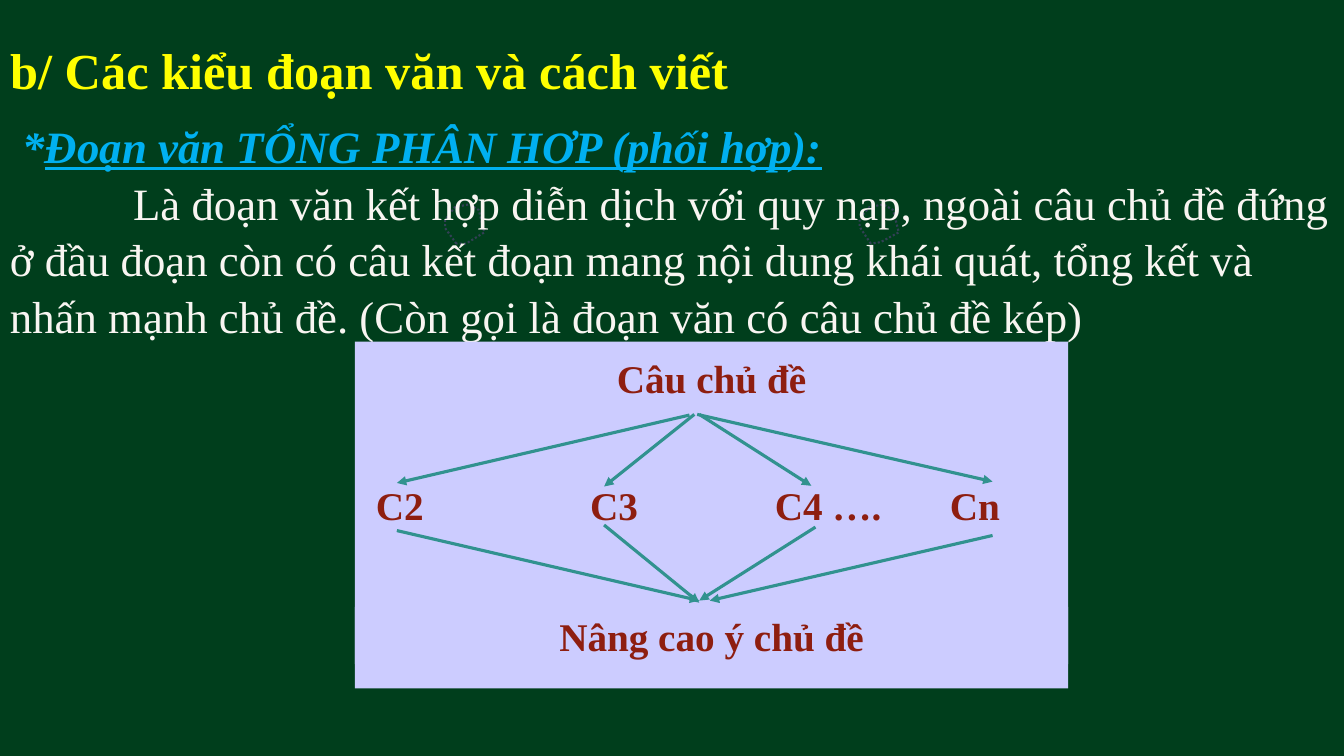
from dataclasses import dataclass

import lxml.etree
import pptx
import pptx.dml.color
import pptx.enum.dml
import pptx.enum.shapes
import pptx.enum.text
import pptx.oxml.ns
import pptx.shapes.autoshape
import pptx.shapes.base
import pptx.slide
import pptx.text.text
import pptx.util

Pt = pptx.util.Pt
RGB = pptx.dml.color.RGBColor
Align = pptx.enum.text.PP_ALIGN
Anchor = pptx.enum.text.MSO_ANCHOR
qn = pptx.oxml.ns.qn

GREEN = RGB(0x00, 0x3E, 0x1C)
YELLOW = RGB(0xFF, 0xFF, 0x00)
BLUE = RGB(0x00, 0xB0, 0xF0)
CREAM = RGB(0xF8, 0xF5, 0xF1)
LILAC = RGB(0xCC, 0xCC, 0xFF)
RED = RGB(0x8E, 0x1E, 0x10)
TEAL = RGB(0x31, 0x92, 0x8F)
SLATE = RGB(0x32, 0x40, 0x55)
FACE = "Times New Roman"


@dataclass
class Panel:
    text: str
    top: float
    height: float
    inset: float
    anchor: Anchor


@dataclass
class Label:
    text: str
    left: float
    width: float


@dataclass
class Arrow:
    x1: float
    y1: float
    x2: float
    y2: float


PANELS = [
    Panel("Câu chủ đề", 244, 247.7, 9.4, Anchor.TOP),
    Panel("Nâng cao ý chủ đề", 433.5, 41, 3.6, Anchor.MIDDLE),
]
LABELS = [
    Label("C2", 268.5, 60),
    Label("C3", 421.5, 60),
    Label("C4 ….", 553.5, 100),
    Label("Cn", 678.5, 60),
]
ARROWS = [
    Arrow(492.5, 296.5, 283.5, 345),
    Arrow(496, 296, 431.5, 347.5),
    Arrow(499.5, 296, 579.5, 347),
    Arrow(498, 296, 709, 344),
    Arrow(283.5, 379, 499.5, 429),
    Arrow(431.5, 375, 499.5, 430.5),
    Arrow(582.5, 376.5, 499.5, 429),
    Arrow(709, 382.5, 507, 429),
]
RING = [(326, 174), (318, 163), (318, 157), (325, 148), (335, 146),
        (342, 150), (346, 166), (333, 173.5)]


def style(par: pptx.text.text._Paragraph, size: float, color: RGB, bold: bool = True) -> None:
    font = par.font
    font.name = FACE
    font.size = Pt(size)
    font.bold = bold
    font.color.rgb = color


def place(item: pptx.shapes.base.BaseShape, left: float, top: float, width: float, height: float) -> None:
    item.left, item.top = Pt(left), Pt(top)
    item.width, item.height = Pt(width), Pt(height)


def pad(frame: pptx.text.text.TextFrame, size: float) -> None:
    frame.margin_left = frame.margin_right = Pt(size)
    frame.margin_top = frame.margin_bottom = Pt(size)


def indent(par: pptx.text.text._Paragraph, size: float) -> None:
    props = par._p.get_or_add_pPr()
    props.set("marL", "0")
    props.set("indent", str(Pt(size)))


def add_ring(slide: pptx.slide.Slide, dx: float, dy: float) -> None:
    spots = [(x + dx, y + dy) for x, y in RING]
    pen = slide.shapes.build_freeform(*spots[0], scale=Pt(1))
    pen.add_line_segments(spots[1:], close=True)
    ring = pen.convert_to_shape()
    ring.shadow.inherit = False
    ring.fill.background()
    ring.line.color.rgb = SLATE
    ring.line.width = Pt(1.5)
    ring.line.dash_style = pptx.enum.dml.MSO_LINE.ROUND_DOT


def add_title(slide: pptx.slide.Slide) -> None:
    title = slide.shapes.title
    place(title, 0, 18.5, 891.5, 61.5)
    frame = title.text_frame
    frame.text = "b/ Các kiểu đoạn văn và cách viết"
    frame.auto_size = pptx.enum.text.MSO_AUTO_SIZE.NONE
    frame.vertical_anchor = Anchor.MIDDLE
    pad(frame, 7.2)
    par = frame.paragraphs[0]
    par.alignment = Align.LEFT
    style(par, 36, YELLOW)


def add_body(slide: pptx.slide.Slide) -> None:
    box = slide.shapes.add_textbox(0, Pt(79.5), Pt(960), Pt(162.5))
    frame = box.text_frame
    frame.word_wrap = True
    head = frame.paragraphs[0]
    head.add_run().text = "*"
    name = head.add_run()
    name.text = "Đoạn văn TỔNG PHÂN HƠP (phối hợp):"
    name.font.underline = True
    style(head, 32, BLUE)
    head.font.italic = True
    indent(head, 9)
    text = frame.add_paragraph()
    text.text = ("Là đoạn văn kết hợp diễn dịch với quy nạp, ngoài câu chủ đề đứng "
                 "ở đầu đoạn còn có câu kết đoạn mang nội dung khái quát, tổng kết và "
                 "nhấn mạnh chủ đề. (Còn gọi là đoạn văn có câu chủ đề kép)")
    style(text, 32, CREAM, False)
    indent(text, 88)
    for par in frame.paragraphs:
        par.line_spacing = 1.05


def add_panel(slide: pptx.slide.Slide, panel: Panel) -> None:
    kind = pptx.enum.shapes.MSO_SHAPE.RECTANGLE
    rect = slide.shapes.add_shape(kind, Pt(253.5), Pt(panel.top), Pt(509.5), Pt(panel.height))
    rect.shadow.inherit = False
    rect.fill.solid()
    rect.fill.fore_color.rgb = LILAC
    rect.line.fill.background()
    frame = rect.text_frame
    frame.text = panel.text
    frame.word_wrap = True
    frame.vertical_anchor = panel.anchor
    pad(frame, panel.inset)
    frame.paragraphs[0].alignment = Align.CENTER
    style(frame.paragraphs[0], 28, RED)


def add_label(slide: pptx.slide.Slide, label: Label) -> None:
    box = slide.shapes.add_textbox(Pt(label.left), Pt(340.5), Pt(label.width), Pt(41))
    frame = box.text_frame
    frame.text = label.text
    frame.word_wrap = True
    frame.margin_left = frame.margin_right = 0
    style(frame.paragraphs[0], 28, RED)


def add_arrow(slide: pptx.slide.Slide, arrow: Arrow) -> None:
    kind = pptx.enum.shapes.MSO_CONNECTOR.STRAIGHT
    line = slide.shapes.add_connector(kind, Pt(arrow.x1), Pt(arrow.y1), Pt(arrow.x2), Pt(arrow.y2))
    line.line.color.rgb = TEAL
    line.line.width = Pt(2.25)
    lxml.etree.SubElement(line.line._get_or_add_ln(), qn("a:tailEnd"), type="triangle")
    lxml.etree.SubElement(line._element.spPr, qn("a:effectLst"))


def main() -> None:
    deck = pptx.Presentation()
    deck.slide_width, deck.slide_height = Pt(960), Pt(540)
    slide = deck.slides.add_slide(deck.slide_layouts[5])
    slide.background.fill.solid()
    slide.background.fill.fore_color.rgb = GREEN
    add_ring(slide, 0, 0)
    add_ring(slide, 296, -0.5)
    add_title(slide)
    add_body(slide)
    for panel in PANELS:
        add_panel(slide, panel)
    for arrow in ARROWS:
        add_arrow(slide, arrow)
    for label in LABELS:
        add_label(slide, label)
    deck.save("out.pptx")


if __name__ == "__main__":
    main()
